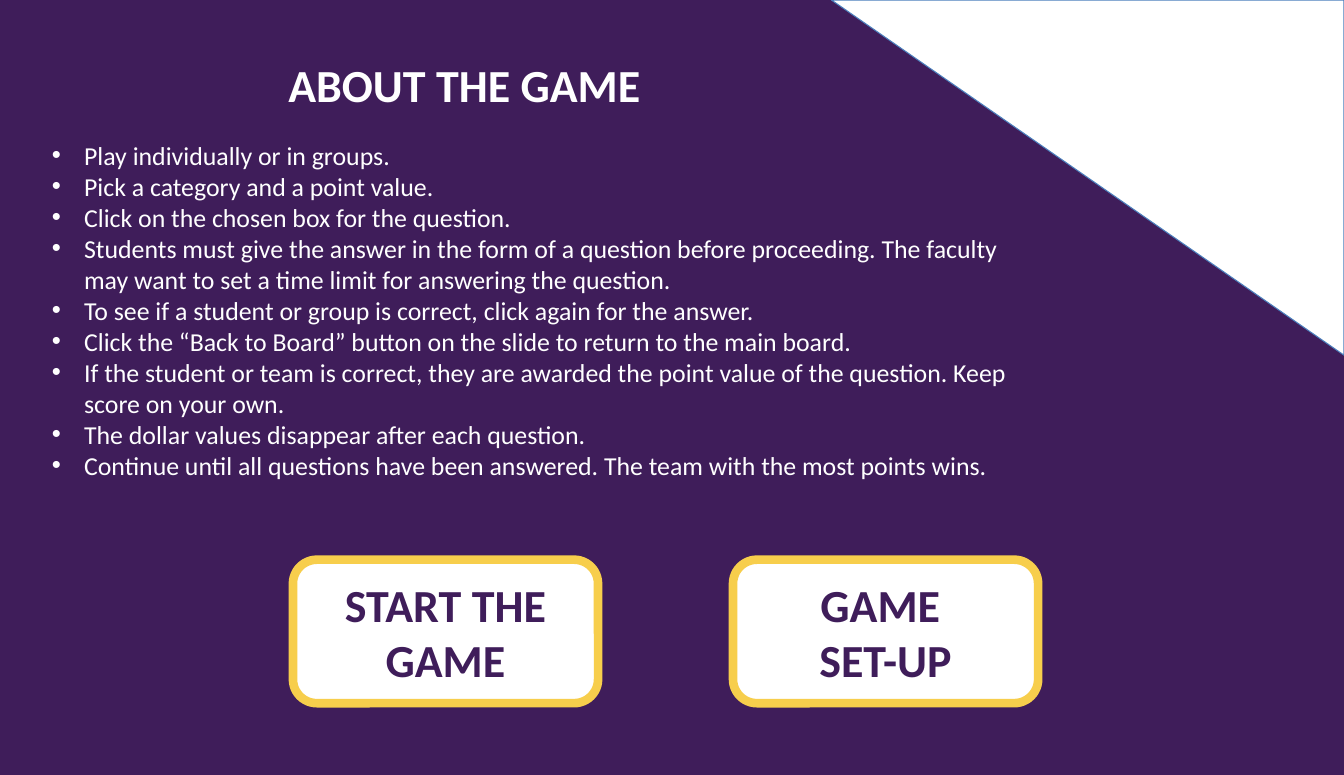
from dataclasses import dataclass

from lxml import etree
from pptx import Presentation
from pptx.dml.color import RGBColor
from pptx.enum.shapes import MSO_SHAPE
from pptx.enum.text import MSO_ANCHOR, MSO_AUTO_SIZE, PP_ALIGN
from pptx.oxml.ns import qn
from pptx.util import Pt

LEFT, CENTER = PP_ALIGN.LEFT, PP_ALIGN.CENTER
TOP, MIDDLE = MSO_ANCHOR.TOP, MSO_ANCHOR.MIDDLE
WEDGE, ROUND = MSO_SHAPE.RIGHT_TRIANGLE, MSO_SHAPE.ROUNDED_RECTANGLE
NO_FIT = MSO_AUTO_SIZE.NONE


@dataclass(frozen=True)
class Theme:
    font: str = "Calibri"
    dark: RGBColor = RGBColor(0x3F, 0x1D, 0x5A)
    light: RGBColor = RGBColor(0xFF, 0xFF, 0xFF)
    gold: RGBColor = RGBColor(0xF7, 0xCE, 0x4C)
    edge: RGBColor = RGBColor(0x4B, 0x7E, 0xBC)
    head: int = 32
    body: int = 18


THEME = Theme()
WIDE, HIGH = 936, 540
INDENT = 22.5

RULES = [
    "Play individually or in groups.",
    "Pick a category and a point value.",
    "Click on the chosen box for the question.",
    "Students must give the answer in the form of a question before "
    "proceeding. The faculty may want to set a time limit for answering "
    "the question.",
    "To see if a student or group is correct, click again for the answer.",
    "Click the “Back to Board” button on the slide to return to the main board.",
    "If the student or team is correct, they are awarded the point value of "
    "the question. Keep score on your own.",
    "The dollar values disappear after each question.",
    "Continue until all questions have been answered. The team with the most "
    "points wins.",
]
BUTTONS = [["START THE GAME"], ["GAME ", "SET-UP"]]


def points(box):
    return [Pt(n) for n in box]


def write(frame, lines, size, color, align=LEFT, anchor=TOP, bold=False):
    """Fill a text frame with one paragraph a line."""
    frame.word_wrap = True
    frame.auto_size = NO_FIT
    frame.vertical_anchor = anchor
    for i, line in enumerate(lines):
        para = frame.add_paragraph() if i else frame.paragraphs[0]
        para.alignment = align
        run = para.add_run()
        run.text = line
        font = run.font
        font.name, font.size, font.bold = THEME.font, Pt(size), bold
        font.color.rgb = color


def add_bullet(para):
    props = para._p.get_or_add_pPr()
    props.set("marL", str(Pt(INDENT)))
    props.set("indent", str(Pt(-INDENT)))
    etree.SubElement(props, qn("a:buFont")).set("typeface", "Arial")
    etree.SubElement(props, qn("a:buChar")).set("char", "•")


def add_block(slide, kind, box, line, width):
    """Add a white shape with a coloured outline."""
    shape = slide.shapes.add_shape(kind, *points(box))
    shape.shadow.inherit = False
    shape.fill.solid()
    shape.fill.fore_color.rgb = THEME.light
    shape.line.color.rgb = line
    shape.line.width = Pt(width)
    return shape


def add_corner(slide, box):
    add_block(slide, WEDGE, box, THEME.edge, 0.75).rotation = 180


def set_title(slide, box, text):
    title = slide.shapes.title
    title.left, title.top, title.width, title.height = points(box)
    write(title.text_frame, [text], THEME.head, THEME.light, CENTER, bold=True)


def add_rules(slide, box):
    frame = slide.shapes.add_textbox(*points(box)).text_frame
    write(frame, RULES, THEME.body, THEME.light)
    for para in frame.paragraphs:
        add_bullet(para)


def add_buttons(slide, box, gap):
    """Share the box equally among the buttons."""
    left, top, width, height = box
    count = len(BUTTONS)
    each = (width - gap * (count - 1)) / count
    for i, lines in enumerate(BUTTONS):
        spot = (left + i * (each + gap), top, each, height)
        shape = add_block(slide, ROUND, spot, THEME.gold, 6)
        write(shape.text_frame, lines, THEME.head, THEME.dark,
              CENTER, MIDDLE, True)


def build_about(deck):
    slide = deck.slides.add_slide(deck.slide_layouts[5])
    fill = slide.background.fill
    fill.solid()
    fill.fore_color.rgb = THEME.dark
    add_corner(slide, (WIDE - 357, 0, 357, 247.5))
    add_rules(slide, (29, 93.5, 701, 247))
    set_title(slide, (162, 36, 323, 46), "ABOUT THE GAME")
    add_buttons(slide, (204, 390, 519, 100), 94)


def main():
    deck = Presentation()
    deck.slide_width, deck.slide_height = Pt(WIDE), Pt(HIGH)
    build_about(deck)
    deck.save("out.pptx")


if __name__ == "__main__":
    main()
